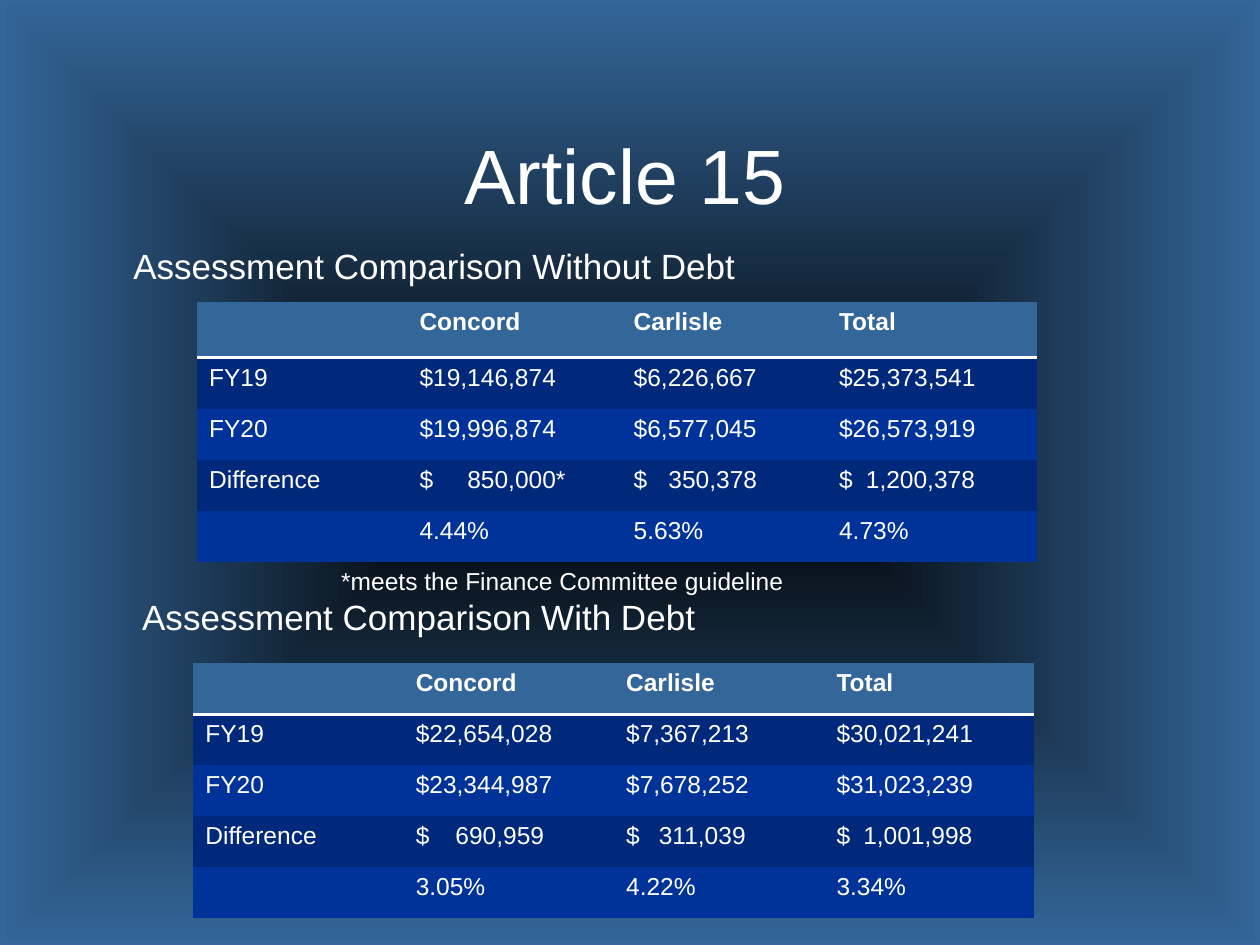
from dataclasses import dataclass

from lxml.etree import SubElement
from pptx import Presentation
from pptx.dml.color import RGBColor
from pptx.enum.text import MSO_ANCHOR, MSO_AUTO_SIZE, PP_ALIGN
from pptx.oxml import parse_xml
from pptx.oxml.ns import nsdecls, qn
from pptx.slide import Slide
from pptx.table import _Cell as Cell
from pptx.text.text import TextFrame
from pptx.util import Inches, Pt

FONT = "Arial"
WHITE = "FFFFFF"
HEADER_FILL = "336699"
BAND_FILLS = ("00297B", "003399")
NO_GRID_STYLE = "{2D5ABB26-0587-4C30-8999-92F81FD0307C}"
TOWNS = ("", "Concord", "Carlisle", "Total")


@dataclass(frozen=True)
class Caption:
    text: str
    left: float
    top: float
    width: float
    height: float
    size: int
    wrap: bool = False


@dataclass(frozen=True)
class Assessment:
    left: float
    top: float
    height: float
    header_height: float
    column_widths: tuple[float, ...]
    amount_stops: tuple[float, ...]
    rows: tuple[tuple[str, ...], ...]


CAPTIONS = (
    Caption("Assessment Comparison Without Debt", 0.96, 1.89, 7.93, 4.39, 20, True),
    Caption("Assessment Comparison With Debt", 1.03, 4.68, 4.64, 0.44, 20),
    Caption("*meets the Finance Committee guideline", 2.61, 4.44, 3.74, 0.34, 14),
)

ASSESSMENTS = (
    Assessment(
        1.56, 2.4, 2.06, 0.44, (1.67, 1.7, 1.63, 1.67), (0, 1.16, 0.98, 1.08),
        (
            ("FY19", "$19,146,874", "$6,226,667", "$25,373,541"),
            ("FY20", "$19,996,874", "$6,577,045", "$26,573,919"),
            ("Difference", "$\t850,000*", "$\t350,378", "$\t1,200,378"),
            ("", "4.44%", "5.63%", "4.73%"),
        ),
    ),
    Assessment(
        1.53, 5.26, 2.03, 0.41, (1.67,) * 4, (0, 1.02, 0.95, 1.08),
        (
            ("FY19", "$22,654,028", "$7,367,213", "$30,021,241"),
            ("FY20", "$23,344,987", "$7,678,252", "$31,023,239"),
            ("Difference", "$\t690,959", "$\t311,039", "$\t1,001,998"),
            ("", "3.05%", "4.22%", "3.34%"),
        ),
    ),
)


def color(value: str) -> RGBColor:
    return RGBColor.from_string(value)


def format_runs(frame: TextFrame, size: int, bold: bool = False) -> None:
    for paragraph in frame.paragraphs:
        for run in paragraph.runs:
            run.font.name = FONT
            run.font.size = Pt(size)
            run.font.bold = bold
            run.font.color.rgb = color(WHITE)


def paint_background(slide: Slide) -> None:
    fill = slide.background.fill
    fill.gradient()
    for stop, (position, shade) in zip(fill.gradient_stops, ((0, "000000"), (1, HEADER_FILL))):
        stop.position = position
        stop.color.rgb = color(shade)
    gradient = slide.element.find(".//" + qn("a:gradFill"))
    gradient.remove(gradient.find(qn("a:lin")))
    shape_path = SubElement(gradient, qn("a:path"), path="shape")
    SubElement(shape_path, qn("a:fillToRect"), l="50000", t="50000", r="50000", b="50000")


def add_title(slide: Slide, text: str) -> None:
    title = slide.shapes.title
    title.left, title.top = Inches(1), Inches(0.92)
    title.width, title.height = Inches(7.92), Inches(0.92)
    frame = title.text_frame
    frame.text = text
    frame.vertical_anchor = MSO_ANCHOR.MIDDLE
    frame.paragraphs[0].alignment = PP_ALIGN.CENTER
    format_runs(frame, 44)


def add_caption(slide: Slide, caption: Caption) -> None:
    box = slide.shapes.add_textbox(
        Inches(caption.left), Inches(caption.top), Inches(caption.width), Inches(caption.height)
    )
    frame = box.text_frame
    frame.word_wrap = caption.wrap
    frame.auto_size = MSO_AUTO_SIZE.NONE if caption.wrap else MSO_AUTO_SIZE.SHAPE_TO_FIT_TEXT
    frame.text = caption.text
    format_runs(frame, caption.size)


def add_bottom_rule(cell: Cell) -> None:
    rule = parse_xml(
        f'<a:lnB {nsdecls("a")} w="{Pt(2)}"><a:solidFill>'
        f'<a:srgbClr val="{WHITE}"/></a:solidFill></a:lnB>'
    )
    cell.fill.solid()
    cell._tc.get_or_add_tcPr().insert(0, rule)


def add_amount_stop(cell: Cell, position: float) -> None:
    properties = cell.text_frame.paragraphs[0]._p.get_or_add_pPr()
    stops = SubElement(properties, qn("a:tabLst"))
    SubElement(stops, qn("a:tab"), pos=str(Inches(position)), algn="r")


def add_assessment(slide: Slide, assessment: Assessment) -> None:
    rows = (TOWNS, *assessment.rows)
    frame = slide.shapes.add_table(
        len(rows), len(TOWNS), Inches(assessment.left), Inches(assessment.top),
        Inches(sum(assessment.column_widths)), Inches(assessment.height),
    )
    table = frame.table
    table._tbl.tblPr.find(qn("a:tableStyleId")).text = NO_GRID_STYLE
    for column, width in zip(table.columns, assessment.column_widths):
        column.width = Inches(width)
    body_height = (assessment.height - assessment.header_height) / len(assessment.rows)
    for row_index, values in enumerate(rows):
        is_header = row_index == 0
        table.rows[row_index].height = Inches(assessment.header_height if is_header else body_height)
        row_fill = HEADER_FILL if is_header else BAND_FILLS[(row_index - 1) % 2]
        for column_index, value in enumerate(values):
            cell = table.cell(row_index, column_index)
            cell.text_frame.text = value
            if "\t" in value:
                add_amount_stop(cell, assessment.amount_stops[column_index])
            format_runs(cell.text_frame, 14, is_header)
            cell.fill.solid()
            cell.fill.fore_color.rgb = color(row_fill)
            if is_header:
                add_bottom_rule(cell)


def main() -> None:
    deck = Presentation()
    deck.slide_width, deck.slide_height = Inches(10), Inches(7.5)
    slide = deck.slides.add_slide(deck.slide_layouts[5])
    paint_background(slide)
    add_title(slide, "Article 15")
    for caption in CAPTIONS:
        add_caption(slide, caption)
    for assessment in ASSESSMENTS:
        add_assessment(slide, assessment)
    deck.save("out.pptx")


if __name__ == "__main__":
    main()
